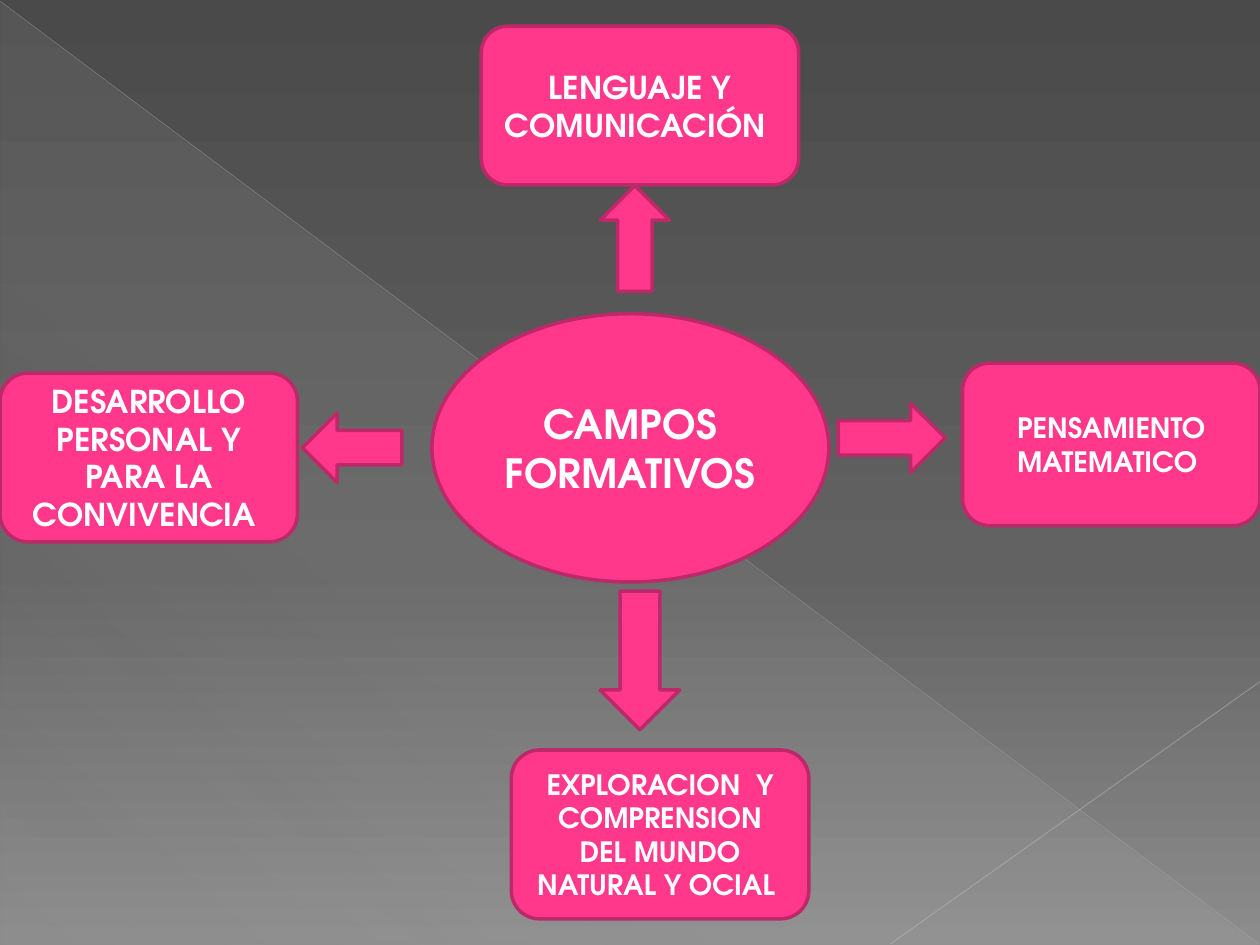
from lxml import etree
from pptx import Presentation
from pptx.dml.color import RGBColor
from pptx.enum.shapes import MSO_CONNECTOR, MSO_SHAPE as SHAPE
from pptx.enum.text import MSO_ANCHOR, PP_ALIGN
from pptx.oxml.ns import qn
from pptx.util import Pt


def color(value):
    return RGBColor.from_string(value)


def set_gradient(properties, stops, angle):
    gradient = etree.Element(qn("a:gradFill"), rotWithShape="1")
    stop_list = etree.SubElement(gradient, qn("a:gsLst"))
    for position, value, opacity in stops:
        stop = etree.SubElement(stop_list, qn("a:gs"), pos=str(position * 1000))
        stop_color = etree.SubElement(stop, qn("a:srgbClr"), val=value)
        if opacity < 100:
            etree.SubElement(stop_color, qn("a:alpha"), val=str(opacity * 1000))
    etree.SubElement(gradient, qn("a:lin"), ang=str(angle * 60000), scaled="0")
    properties.replace(properties.find(qn("a:solidFill")), gradient)


presentation = Presentation()
presentation.slide_width = Pt(720)
presentation.slide_height = Pt(540)
slide = presentation.slides.add_slide(presentation.slide_layouts[6])

slide.background.fill.solid()
background = slide.element.find(".//" + qn("p:bgPr"))
set_gradient(background, [(0, "4A4A4A", 100), (60, "626262", 100), (100, "8C8C8C", 100)], 90)

triangle = slide.shapes.add_shape(SHAPE.RIGHT_TRIANGLE, Pt(0.5), Pt(1.2), Pt(718.8), Pt(538.5))
triangle.shadow.inherit = False
triangle.line.fill.background()
triangle.fill.solid()
set_gradient(triangle.element.spPr, [(0, "D2D2D2", 10), (70, "D2D2D2", 8), (100, "D2D2D2", 1)], 133)

diagonals = [
    (0, 0.7, 719.3, 539.3, "BFBFBF", 0.39, 35),
    (720, 389.5, 509, 539.3, "C6C6C6", 0.47, 45),
]
for x1, y1, x2, y2, value, width, opacity in diagonals:
    diagonal = slide.shapes.add_connector(MSO_CONNECTOR.STRAIGHT, Pt(x1), Pt(y1), Pt(x2), Pt(y2))
    diagonal.line.color.rgb = color(value)
    diagonal.line.width = Pt(width)
    properties = diagonal.element.spPr
    line_color = properties.find(".//" + qn("a:srgbClr"))
    etree.SubElement(line_color, qn("a:alpha"), val=str(opacity * 1000))
    etree.SubElement(properties, qn("a:effectLst"))

diagram = [
    (SHAPE.OVAL, 246.8, 179.3, 226.8, 153.3, "CAMPOS FORMATIVOS ", 23),
    (SHAPE.RIGHT_ARROW, 479, 230.4, 61.2, 39.6, "", 0),
    (SHAPE.ROUNDED_RECTANGLE, 292.2, 428.6, 170, 96.5, "EXPLORACION  Y COMPRENSION DEL MUNDO NATURAL Y OCIAL ", 16),
    (SHAPE.UP_ARROW, 343, 106, 39.6, 60.5, "", 0),
    (SHAPE.ROUNDED_RECTANGLE, 550, 207.5, 170, 92.9, "PENSAMIENTO MATEMATICO ", 16),
    (SHAPE.DOWN_ARROW, 343, 337.8, 45.4, 79.2, "", 0),
    (SHAPE.LEFT_ARROW, 172.8, 236, 56.9, 39.6, "", 0),
    (SHAPE.ROUNDED_RECTANGLE, 275, 15, 181.4, 90.7, "LENGUAJE Y COMUNICACIÓN ", 18),
    (SHAPE.ROUNDED_RECTANGLE, 0, 213.2, 170, 96.5, "DESARROLLO PERSONAL Y PARA LA CONVIVENCIA ", 18),
]
for kind, left, top, width, height, text, size in diagram:
    shape = slide.shapes.add_shape(kind, Pt(left), Pt(top), Pt(width), Pt(height))
    shape.shadow.inherit = False
    shape.fill.solid()
    shape.fill.fore_color.rgb = color("FF388C")
    shape.line.color.rgb = color("BD2968")
    shape.line.width = Pt(2)
    if text:
        text_frame = shape.text_frame
        text_frame.text = text
        text_frame.word_wrap = True
        text_frame.vertical_anchor = MSO_ANCHOR.MIDDLE
        paragraph = text_frame.paragraphs[0]
        paragraph.alignment = PP_ALIGN.CENTER
        font = paragraph.runs[0].font
        font.name = "TeX Gyre Adventor"
        font.size = Pt(size)
        font.bold = True
        font.color.rgb = color("FFFFFF")

presentation.save("out.pptx")
